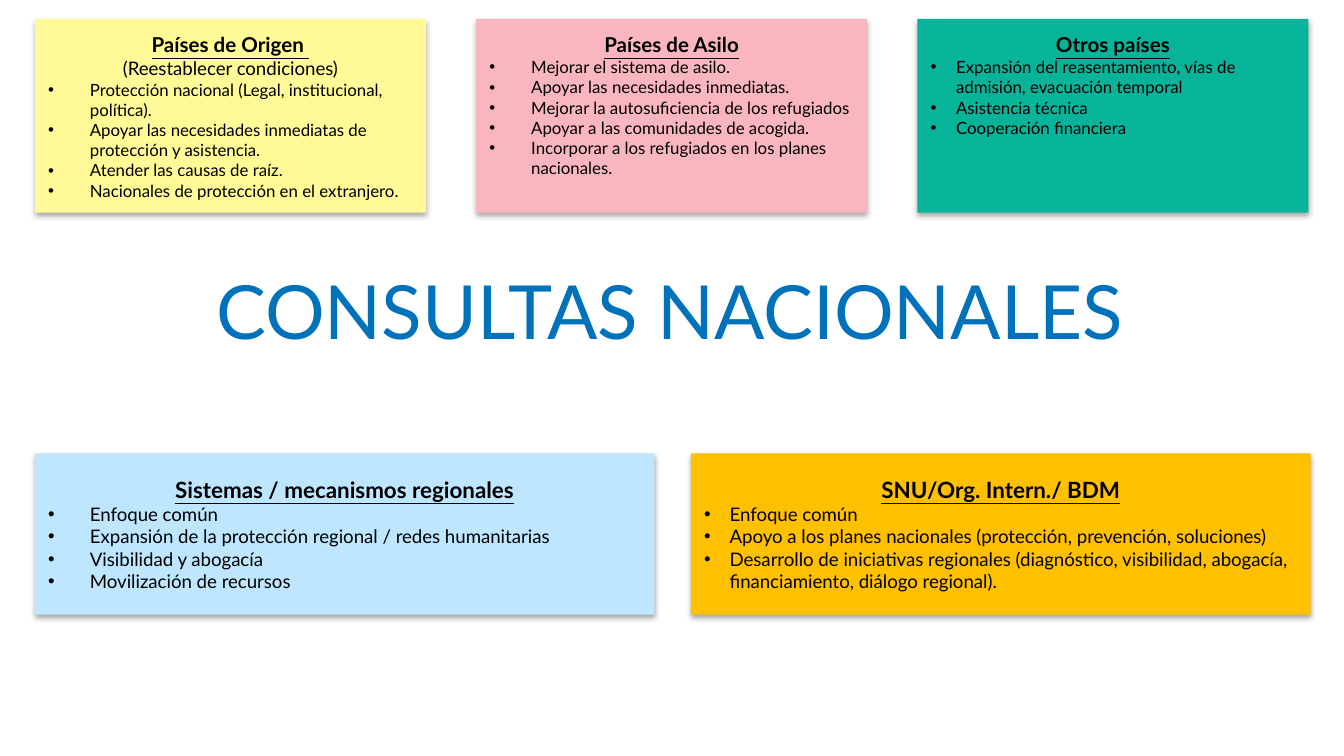
from lxml.etree import SubElement
from pptx import Presentation
from pptx.dml.color import RGBColor
from pptx.enum.shapes import MSO_SHAPE
from pptx.enum.text import MSO_ANCHOR, MSO_AUTO_SIZE, PP_ALIGN
from pptx.oxml.ns import qn
from pptx.util import Cm, Pt

FONT = "Lato"
COLORS = {
    "text": "000000", "title": "0072BC", "origin": "FFF997",
    "asylum": "F9B6BF", "other": "08B499", "region": "BFE6FF", "agency": "FFC000",
}
LEFT = 0.66
WIDE, NARROW = 0.79, 0.48  # bullet indents in cm

# Each card: colour, heading, subheading, indent, items
TOP_CARDS = [
    ("origin", "Países de Origen ", "(Reestablecer condiciones)", WIDE, [
        "Protección nacional (Legal, institucional, política).",
        "Apoyar las necesidades inmediatas de protección y asistencia.",
        "Atender las causas de raíz.",
        "Nacionales de protección en el extranjero."]),
    ("asylum", "Países de Asilo", None, WIDE, [
        "Mejorar el sistema de asilo.",
        "Apoyar las necesidades inmediatas.",
        "Mejorar la autosuficiencia de los refugiados",
        "Apoyar a las comunidades de acogida.",
        "Incorporar a los refugiados en los planes nacionales."]),
    ("other", "Otros países", None, NARROW, [
        "Expansión del reasentamiento, vías de admisión, evacuación temporal",
        "Asistencia técnica",
        "Cooperación financiera"]),
]
LOW_CARDS = [
    ("region", "Sistemas / mecanismos regionales", None, WIDE, [
        "Enfoque común",
        "Expansión de la protección regional / redes humanitarias",
        "Visibilidad y abogacía",
        "Movilización de recursos"]),
    ("agency", "SNU/Org. Intern./ BDM", None, NARROW, [
        "Enfoque común",
        "Apoyo a los planes nacionales (protección, prevención, soluciones)",
        "Desarrollo de iniciativas regionales (diagnóstico, visibilidad, abogacía, "
        "financiamiento, diálogo regional)."]),
]


def color(name):
    return RGBColor.from_string(COLORS[name])


def style(para, size, tint="text", strong=False):
    """Format the runs of a paragraph; strong means bold and underlined."""
    for run in para.runs:
        font = run.font
        font.name, font.size = FONT, Pt(size)
        font.bold = font.underline = strong
        font.color.rgb = color(tint)


def add_shadow(shape):
    shape.shadow.inherit = False
    effects = shape._element.spPr.find(qn("a:effectLst"))
    outer = SubElement(effects, qn("a:outerShdw"), blurRad=str(Pt(3.1)),
                       dist=str(Pt(1.8)), dir="5400000", rotWithShape="0")
    black = SubElement(outer, qn("a:srgbClr"), val=COLORS["text"])
    SubElement(black, qn("a:alpha"), val="35000")


def add_bullet(para, indent):
    props = para._p.get_or_add_pPr()
    props.set("marL", str(Cm(indent)))
    props.set("indent", str(-Cm(indent)))
    SubElement(props, qn("a:buFont"), typeface="Arial")
    SubElement(props, qn("a:buChar"), char="•")


def add_card(slide, card, box, size, anchor):
    """Draw a filled card; size is that of its list items."""
    tint, head, note, indent, items = card
    shape = slide.shapes.add_shape(MSO_SHAPE.RECTANGLE, *map(Cm, box))
    shape.fill.solid()
    shape.fill.fore_color.rgb = color(tint)
    shape.line.fill.background()
    add_shadow(shape)
    frame = shape.text_frame
    frame.word_wrap = True
    frame.vertical_anchor = anchor
    frame.margin_top = frame.margin_bottom = Cm(0.25)
    para = frame.paragraphs[0]
    para.text, para.alignment = head, PP_ALIGN.CENTER
    style(para, size + 2, strong=True)
    if note:
        para = frame.add_paragraph()
        para.text, para.alignment = note, PP_ALIGN.CENTER
        style(para, size + 1)
    for item in items:
        para = frame.add_paragraph()
        para.text, para.alignment = item, PP_ALIGN.LEFT
        add_bullet(para, indent)
        style(para, size)


def add_row(slide, cards, top, width, height, step, size, anchor):
    for i, card in enumerate(cards):
        add_card(slide, card, (LEFT + i * step, top, width, height), size, anchor)


def set_title(slide, text):
    title = slide.shapes.title
    title.left, title.top = Cm(0.79), Cm(4.88)
    title.width, title.height = Cm(24.1), Cm(2.49)
    frame = title.text_frame
    frame.text = text
    frame.word_wrap = True
    frame.auto_size = MSO_AUTO_SIZE.NONE
    frame.vertical_anchor = MSO_ANCHOR.TOP
    para = frame.paragraphs[0]
    para.alignment = PP_ALIGN.CENTER
    para.line_spacing = 1.0
    style(para, 40, "title")


def main():
    deck = Presentation()
    deck.slide_width, deck.slide_height = Cm(25.4), Cm(14.29)
    slide = deck.slides.add_slide(deck.slide_layouts[5])
    set_title(slide, "CONSULTAS NACIONALES ")
    add_row(slide, TOP_CARDS, 0.36, 7.39, 3.66, 8.34, 9, MSO_ANCHOR.TOP)
    add_row(slide, LOW_CARDS, 8.57, 11.71, 3.05, 12.4, 10, MSO_ANCHOR.MIDDLE)
    deck.save("out.pptx")


if __name__ == "__main__":
    main()
